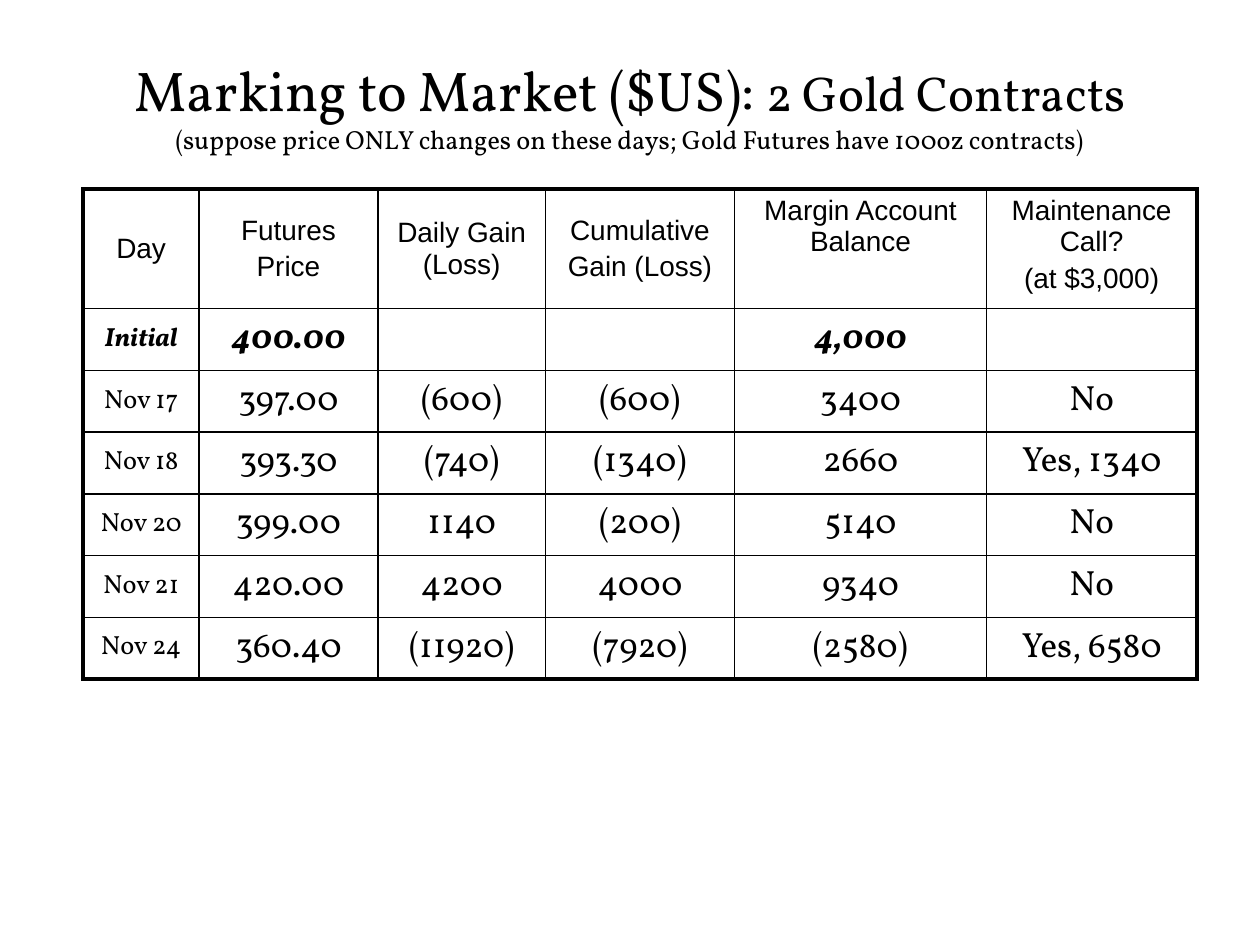
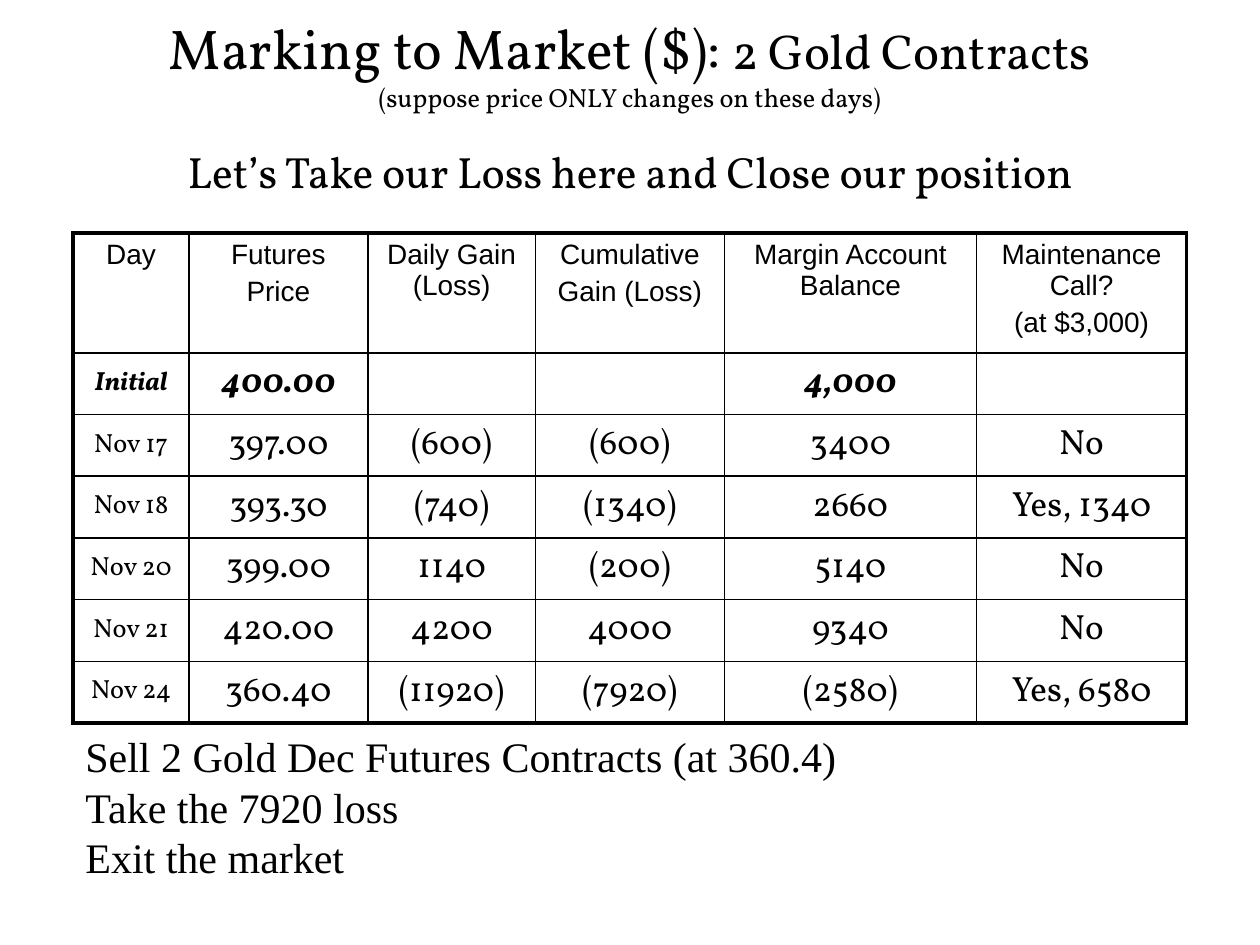
from dataclasses import dataclass
from lxml.etree import SubElement
from pptx import Presentation
from pptx.dml.color import RGBColor
from pptx.enum.text import MSO_ANCHOR, PP_ALIGN
from pptx.oxml.ns import qn
from pptx.util import Inches, Pt


@dataclass(frozen=True)
class Theme:
    ink: str = "000000"
    serif: str = "Vollkorn"
    header_font: str = "Arial"
    body_font: str = "Times New Roman"
    title: int = 32
    subject: int = 28
    note: int = 15
    decision: int = 25
    header: int = 16
    day: int = 15
    figure: int = 20
    body: int = 24
    header_gap: float = 3.2
    day_gap: float = 3
    figure_gap: float = 1
    outer_line: float = 2.25
    inner_line: float = 1


THEME = Theme()
COLUMN_WIDTHS = [0.92, 1.42, 1.33, 1.5, 2, 1.67]
HEADER_HEIGHT = 0.95
DAY_HEIGHT = 0.49
HEADERS = [
    ["Day"],
    ["Futures", "Price"],
    ["Daily Gain (Loss)"],
    ["Cumulative", "Gain (Loss)"],
    ["Margin Account Balance"],
    ["Maintenance Call?", "(at $3,000)"],
]
DAYS = [
    ["Initial", "400.00", "", "", "4,000", ""],
    ["Nov 17", "397.00", "(600)", "(600)", "3400", "No"],
    ["Nov 18", "393.30", "(740)", "(1340)", "2660", "Yes, 1340"],
    ["Nov 20", "399.00", "1140", "(200)", "5140", "No"],
    ["Nov 21", "420.00", "4200", "4000", "9340", "No"],
    ["Nov 24", "360.40", "(11920)", "(7920)", "(2580)", "Yes, 6580"],
]


def add_span(para, text, size, font, strong=False):
    span = para.add_run()
    span.text = text
    span.font.size = Pt(size)
    span.font.name = font
    span.font.bold = span.font.italic = strong
    span.font.color.rgb = RGBColor.from_string(THEME.ink)


def next_para(frame, index):
    return frame.add_paragraph() if index else frame.paragraphs[0]


def add_box(page, left, top, width, height):
    box = page.shapes.add_textbox(Inches(left), Inches(top), Inches(width), Inches(height))
    box.text_frame.word_wrap = True
    return box.text_frame


def add_title(page, heading, note, decision=None):
    frame = add_box(page, 0.75, 0.33, 8.5, 1)
    frame.vertical_anchor = MSO_ANCHOR.MIDDLE
    lines = [
        (39, 0, [(heading, THEME.title), ("2 Gold Contracts", THEME.subject)]),
        (18.7, 0, [(note, THEME.note)]),
    ]
    if decision:
        lines.append((35, 12.8, [(decision, THEME.decision)]))
    for index, (line_height, gap, spans) in enumerate(lines):
        para = next_para(frame, index)
        para.alignment = PP_ALIGN.CENTER
        para.line_spacing = Pt(line_height)
        para.space_before = Pt(gap)
        for text, size in spans:
            add_span(para, text, size, THEME.serif)


def set_borders(cell, row, column):
    last_row, last_column = len(DAYS), len(HEADERS) - 1
    on_edge = {
        "a:lnL": column == 0,
        "a:lnR": column == last_column,
        "a:lnT": row == 0,
        "a:lnB": row == last_row,
    }
    properties = cell._tc.get_or_add_tcPr()
    for tag, outer in on_edge.items():
        width = THEME.outer_line if outer else THEME.inner_line
        line = SubElement(properties, qn(tag), w=str(Pt(width)))
        fill = SubElement(line, qn("a:solidFill"))
        SubElement(fill, qn("a:srgbClr"), val=THEME.ink)


def fill_cell(cell, texts, size, gap, font, strong):
    for index, text in enumerate(texts):
        para = next_para(cell.text_frame, index)
        para.alignment = PP_ALIGN.CENTER
        para.space_before = Pt(gap)
        if text:
            add_span(para, text, size, font, strong)


def add_margin_table(page, left, top, header_anchors):
    heights = [HEADER_HEIGHT] + [DAY_HEIGHT] * len(DAYS)
    table = page.shapes.add_table(
        len(heights), len(HEADERS), Inches(left), Inches(top),
        Inches(sum(COLUMN_WIDTHS)), Inches(sum(heights)),
    ).table
    table.first_row = table.horz_banding = False
    for column, width in zip(table.columns, COLUMN_WIDTHS):
        column.width = Inches(width)
    for row, height in zip(table.rows, heights):
        row.height = Inches(height)
    rows = [HEADERS] + [[[value] for value in day] for day in DAYS]
    for row, entries in enumerate(rows):
        for column, texts in enumerate(entries):
            cell = table.cell(row, column)
            cell.vertical_anchor = MSO_ANCHOR.MIDDLE if row else header_anchors[column]
            if row == 0:
                style = THEME.header, THEME.header_gap, THEME.header_font
            elif column == 0:
                style = THEME.day, THEME.day_gap, THEME.serif
            else:
                style = THEME.figure, THEME.figure_gap, THEME.serif
            fill_cell(cell, texts, *style, strong=row == 1)
            set_borders(cell, row, column)
            cell.fill.background()


def add_closing_steps(page, steps):
    frame = add_box(page, 0.58, 5.75, 7.33, 1.31)
    for index, step in enumerate(steps):
        add_span(next_para(frame, index), step, THEME.body, THEME.body_font)


def main():
    deck = Presentation()
    deck.slide_width, deck.slide_height = Inches(10), Inches(7.5)
    blank = deck.slide_layouts[6]

    page = deck.slides.add_slide(blank)
    add_title(
        page,
        "Marking to Market ($US): ",
        "(suppose price ONLY changes on these days; Gold Futures have 100oz contracts)",
    )
    add_margin_table(page, 0.66, 1.5, [MSO_ANCHOR.MIDDLE] * 4 + [MSO_ANCHOR.TOP] * 2)

    page = deck.slides.add_slide(blank)
    add_title(
        page,
        "Marking to Market ($): ",
        "(suppose price ONLY changes on these days)",
        "Let’s Take our Loss here and Close our position",
    )
    add_margin_table(page, 0.58, 1.85, [MSO_ANCHOR.TOP] * 6)
    add_closing_steps(page, [
        "Sell 2 Gold Dec Futures Contracts (at 360.4)",
        "Take the 7920 loss",
        "Exit the market",
    ])

    deck.save("out.pptx")


if __name__ == "__main__":
    main()
